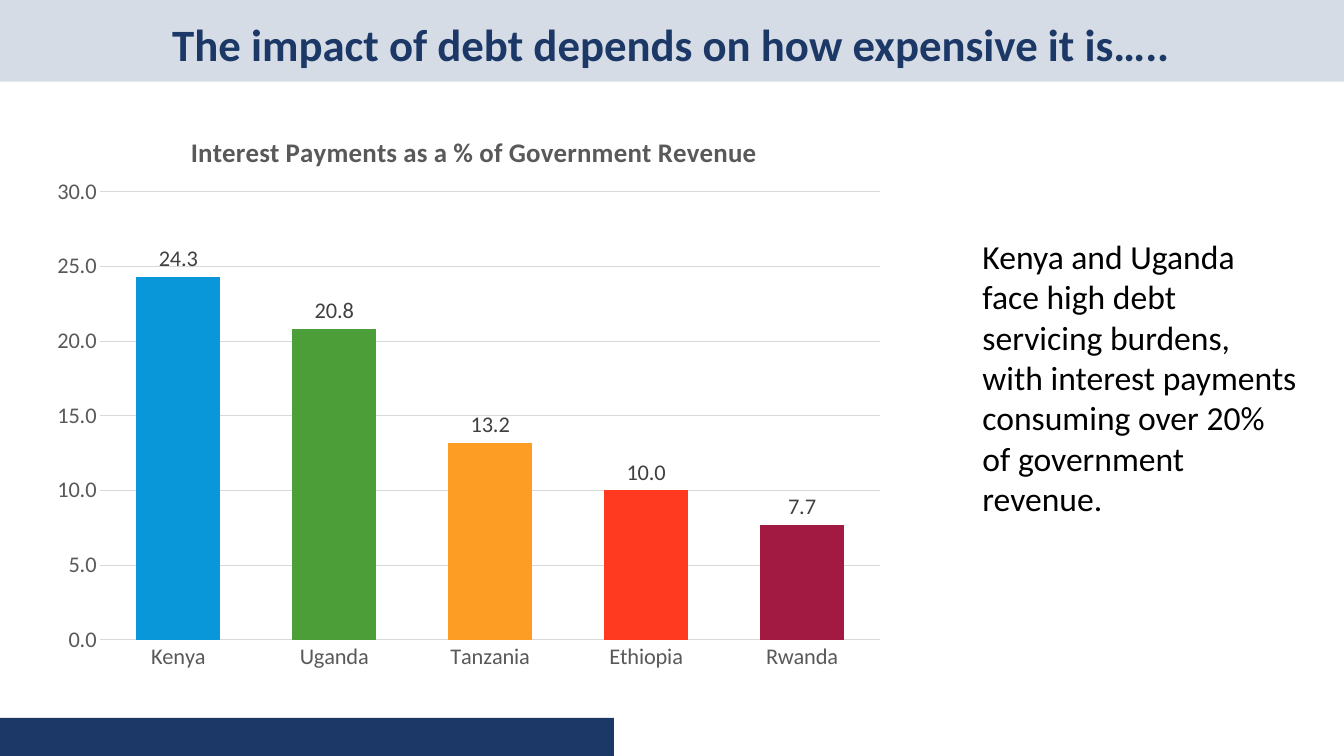
from lxml import etree
from pptx import Presentation
from pptx import util as u
from pptx.chart import data as cd
from pptx.dml.color import RGBColor
from pptx.enum import chart as ch, shapes, text
from pptx.oxml import ns

FONT = "Calibri"
NAVY = RGBColor(0x1C, 0x38, 0x67)
PALE = RGBColor(0xD6, 0xDC, 0xE5)
BLACK = RGBColor(0, 0, 0)
DARK = RGBColor(0x40, 0x40, 0x40)
GREY = RGBColor(0x59, 0x59, 0x59)
RULE = RGBColor(0xD9, 0xD9, 0xD9)

# country, interest payments as % of revenue, bar colour
COUNTRIES = [
    ("Kenya", 24.3, RGBColor(0x0A, 0x97, 0xD9)),
    ("Uganda", 20.8, RGBColor(0x4C, 0x9F, 0x38)),
    ("Tanzania", 13.2, RGBColor(0xFD, 0x9D, 0x24)),
    ("Ethiopia", 10.0, RGBColor(0xFF, 0x3A, 0x21)),
    ("Rwanda", 7.7, RGBColor(0xA2, 0x19, 0x42)),
]


def box(*lengths):
    return [u.Cm(n) for n in lengths]


def set_font(font, size, color, bold=False):
    values = {"name": FONT, "size": u.Pt(size), "bold": bold}
    for name, value in values.items():
        setattr(font, name, value)
    font.color.rgb = color


def add_band(s, at, color):
    """Add a plain band behind the title."""
    sp = s.shapes.add_shape(shapes.MSO_SHAPE.RECTANGLE, *box(*at))
    sp.shadow.inherit = False
    sp.fill.solid()
    sp.fill.fore_color.rgb = color
    sp.line.fill.background()
    s.shapes.title._element.addprevious(sp._element)


def set_title(s, wording, at):
    sp = s.shapes.title
    for name, value in zip(("left", "top", "width", "height"), box(*at)):
        setattr(sp, name, value)
    tf = sp.text_frame
    tf.text = wording
    tf.auto_size = text.MSO_AUTO_SIZE.NONE
    tf.vertical_anchor = text.MSO_ANCHOR.MIDDLE
    p = tf.paragraphs[0]
    p.alignment = text.PP_ALIGN.CENTER
    p.line_spacing = 0.9
    set_font(p.runs[0].font, 32, NAVY, bold=True)


def add_text(s, wording, at):
    tf = s.shapes.add_textbox(*box(*at)).text_frame
    tf.word_wrap = True
    tf.auto_size = text.MSO_AUTO_SIZE.SHAPE_TO_FIT_TEXT
    r = tf.paragraphs[0].add_run()
    r.text = wording
    set_font(r.font, 24, BLACK)


def place(element, **fractions):
    """Fix a chart part at fractions of the chart area."""
    for old in element.findall(ns.qn("c:layout")):
        element.remove(old)
    layout = etree.Element(ns.qn("c:layout"))
    manual = etree.SubElement(layout, ns.qn("c:manualLayout"))
    values = {"xMode": "edge", "yMode": "edge", **fractions}
    if "w" in fractions:
        values = {"layoutTarget": "inner", **values}
    for name, value in values.items():
        etree.SubElement(manual, ns.qn("c:" + name), val=str(value))
    text_part = element.find(ns.qn("c:tx"))
    if text_part is None:
        element.insert(0, layout)
    else:
        text_part.addnext(layout)


def format_axis(axis):
    values = {"major_tick_mark": ch.XL_TICK_MARK.NONE,
              "minor_tick_mark": ch.XL_TICK_MARK.NONE}
    for name, value in values.items():
        setattr(axis, name, value)
    set_font(axis.tick_labels.font, 16, GREY)


def format_rule(line):
    line.color.rgb = RULE
    line.width = u.Pt(0.75)


def add_column_chart(s, heading, at):
    data = cd.CategoryChartData(number_format="0.0")
    data.categories = [name for name, _, _ in COUNTRIES]
    data.add_series("Series 1", [value for _, value, _ in COUNTRIES])
    chart = s.shapes.add_chart(
        ch.XL_CHART_TYPE.COLUMN_CLUSTERED, *box(*at), data).chart
    set_font(chart.font, 16, BLACK)
    chart.has_legend = False

    chart.has_title = True
    r = chart.chart_title.text_frame.paragraphs[0].add_run()
    r.text = heading
    set_font(r.font, 19.2, GREY, bold=True)
    chart.chart_title.include_in_layout = False
    place(chart.chart_title._element, x=0.17, y=0.05)
    place(chart._chartSpace.chart.plotArea, x=0.07, y=0.16, w=0.91, h=0.77)

    cat, val = chart.category_axis, chart.value_axis
    for axis in (cat, val):
        format_axis(axis)
    format_rule(cat.format.line)
    val.format.line.fill.background()
    val.has_major_gridlines = True
    format_rule(val.major_gridlines.format.line)
    val.minimum_scale, val.maximum_scale, val.major_unit = 0, 30, 5
    val.tick_labels.number_format = "0.0"
    val.tick_labels.number_format_is_linked = False

    plot = chart.plots[0]
    labels_on = {"gap_width": 86, "overlap": -27,
                 "vary_by_categories": False, "has_data_labels": True}
    for name, value in labels_on.items():
        setattr(plot, name, value)
    labels = plot.data_labels
    label_values = {"show_value": True, "number_format": "0.0",
                    "number_format_is_linked": False,
                    "position": ch.XL_LABEL_POSITION.OUTSIDE_END}
    for name, value in label_values.items():
        setattr(labels, name, value)
    set_font(labels.font, 16, DARK)
    for i, (_, _, color) in enumerate(COUNTRIES):
        fill = plot.series[0].points[i].format.fill
        fill.solid()
        fill.fore_color.rgb = color


def main():
    prs = Presentation()
    prs.slide_width, prs.slide_height = box(33.87, 19.05)
    s = prs.slides.add_slide(prs.slide_layouts[5])
    add_band(s, (0, 0, 33.87, 2.06), PALE)
    add_band(s, (0, 18.09, 15.47, 0.96), NAVY)
    set_title(s, "The impact of debt depends on how expensive it is…..",
              (1.02, 0.38, 31.8, 1.63))
    add_column_chart(s, "Interest Payments as a % of Government Revenue",
                     (1.02, 2.49, 21.59, 14.66))
    add_text(s, "Kenya and Uganda face high debt servicing burdens, with "
                "interest payments consuming over 20% of government revenue.",
             (24.51, 5.82, 8.46, 7.44))
    prs.save("out.pptx")


if __name__ == "__main__":
    main()
